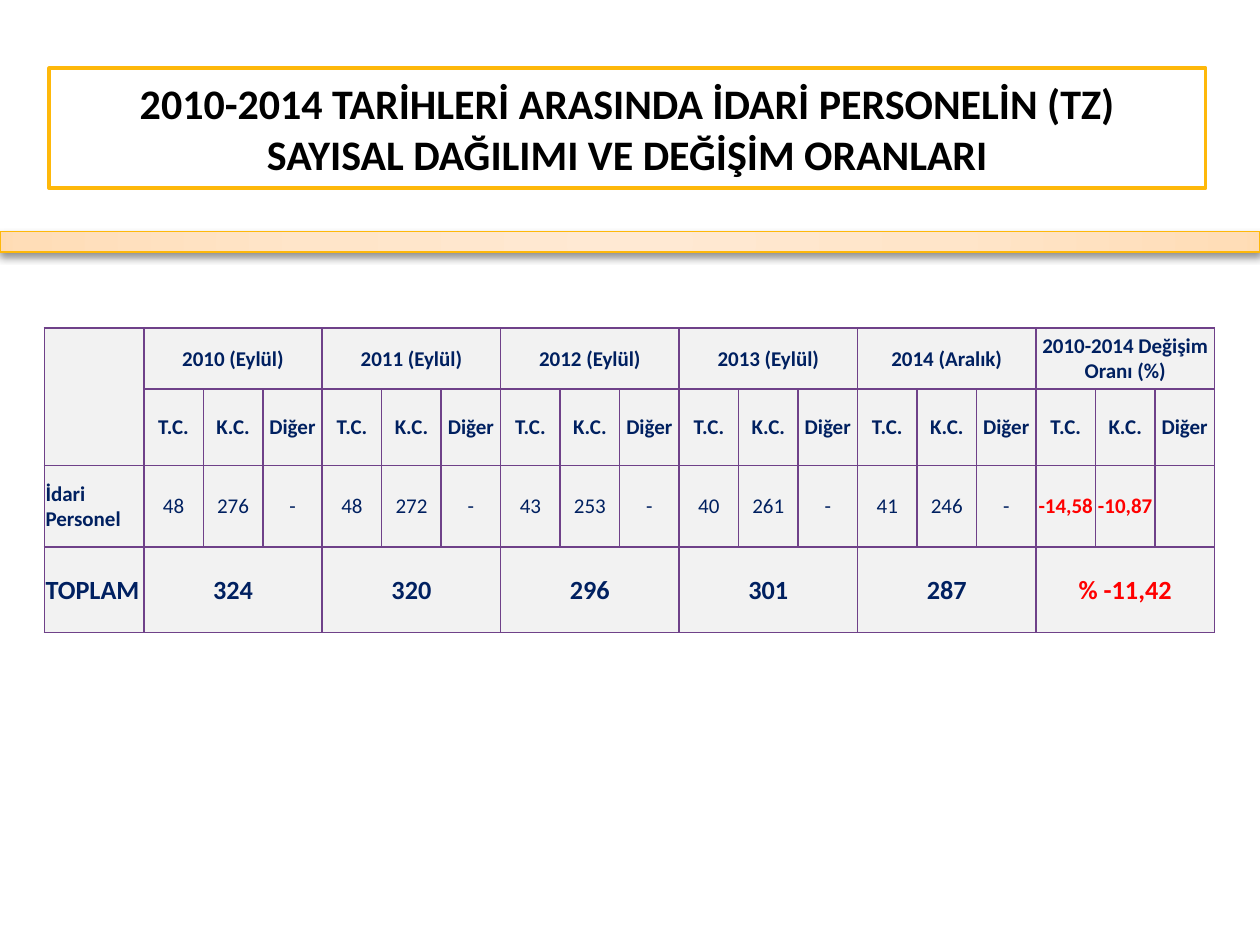
from dataclasses import dataclass

from lxml import etree
from pptx import Presentation
from pptx.dml.color import RGBColor
from pptx.enum.shapes import MSO_SHAPE
from pptx.enum.text import MSO_ANCHOR, MSO_AUTO_SIZE, PP_ALIGN
from pptx.oxml.ns import qn
from pptx.slide import Slide
from pptx.table import Table, _Cell
from pptx.text.text import TextFrame
from pptx.util import Pt

RECTANGLE = MSO_SHAPE.RECTANGLE
MIDDLE = MSO_ANCHOR.MIDDLE
NO_AUTOFIT = MSO_AUTO_SIZE.NONE
LEFT, CENTER = PP_ALIGN.LEFT, PP_ALIGN.CENTER


@dataclass(frozen=True)
class Theme:
    font: str = "Calibri"
    paper: str = "FFFFFF"
    ink: str = "000000"
    gold: str = "FEB80A"
    navy: str = "002060"
    red: str = "FF0000"
    cell: str = "F2F2F2"
    border: str = "6F4189"
    band: tuple = ((0, "FFE9D3"), (50, "FFE5C9"), (97, "FFDDB7"), (100, "FFDBB2"))
    title_size: float = 24
    body_size: float = 12
    total_size: float = 15


@dataclass(frozen=True)
class Period:
    heading: str
    counts: tuple[str, str, str]
    total: str
    is_change: bool = False


@dataclass(frozen=True)
class TextStyle:
    size: float
    color: str
    bold: bool = True
    align: PP_ALIGN = CENTER


THEME = Theme()
TITLE = (
    "2010-2014 TARİHLERİ ARASINDA İDARİ PERSONELİN (TZ)\n"
    "SAYISAL DAĞILIMI VE DEĞİŞİM ORANLARI"
)
CITIZENSHIPS = ("T.C.", "K.C.", "Diğer")
PERIODS = (
    Period("2010 (Eylül)", ("48", "276", "-"), "324"),
    Period("2011 (Eylül)", ("48", "272", "-"), "320"),
    Period("2012 (Eylül)", ("43", "253", "-"), "296"),
    Period("2013 (Eylül)", ("40", "261", "-"), "301"),
    Period("2014 (Aralık)", ("41", "246", "-"), "287"),
    Period("2010-2014 Değişim Oranı (%)", ("-14,58", "-10,87", ""), "% -11,42", True),
)
ROW_HEIGHTS = (35, 43.6, 46.6, 49)
LABEL_WIDTH = 56.88
COUNT_WIDTH = 34

HEADING = TextStyle(THEME.body_size, THEME.navy)
ROW_LABEL = TextStyle(THEME.body_size, THEME.navy, align=LEFT)
COUNT = TextStyle(THEME.body_size, THEME.navy, bold=False)
COUNT_CHANGE = TextStyle(THEME.body_size, THEME.red)
TOTAL_LABEL = TextStyle(THEME.total_size, THEME.navy, align=LEFT)
TOTAL = TextStyle(THEME.total_size, THEME.navy)
TOTAL_CHANGE = TextStyle(THEME.total_size, THEME.red)


def rgb(color: str) -> RGBColor:
    return RGBColor.from_string(color)


def add_color(parent: etree._Element, color: str) -> etree._Element:
    return etree.SubElement(parent, qn("a:srgbClr"), val=color)


def write_text(frame: TextFrame, text: str, style: TextStyle) -> None:
    frame.text = text
    for paragraph in frame.paragraphs:
        paragraph.alignment = style.align
        for run in paragraph.runs:
            run.font.name = THEME.font
            run.font.size = Pt(style.size)
            run.font.bold = style.bold
            run.font.color.rgb = rgb(style.color)


def add_title(slide: Slide) -> None:
    title = slide.shapes.title
    title.left, title.top = Pt(28), Pt(39)
    title.width, title.height = Pt(661), Pt(68.5)
    title.fill.solid()
    title.fill.fore_color.rgb = rgb(THEME.paper)
    title.line.color.rgb = rgb(THEME.gold)
    title.line.width = Pt(2)
    title.text_frame.auto_size = NO_AUTOFIT
    title.text_frame.vertical_anchor = MIDDLE
    write_text(title.text_frame, TITLE, TextStyle(THEME.title_size, THEME.ink))


def add_band(slide: Slide) -> None:
    band = slide.shapes.add_shape(RECTANGLE, Pt(0), Pt(132.5), Pt(720), Pt(11.5))
    band.line.color.rgb = rgb(THEME.gold)
    band.line.width = Pt(0.75)
    band.shadow.inherit = False
    band.fill.background()
    properties = band.element.spPr

    gradient = etree.Element(qn("a:gradFill"), rotWithShape="1")
    stops = etree.SubElement(gradient, qn("a:gsLst"))
    for percent, color in THEME.band:
        add_color(etree.SubElement(stops, qn("a:gs"), pos=str(percent * 1000)), color)
    radial = etree.SubElement(gradient, qn("a:path"), path="circle")
    etree.SubElement(radial, qn("a:fillToRect"), l="50000", t="50000", r="50000", b="50000")
    properties.replace(properties.find(qn("a:noFill")), gradient)

    shadow = etree.SubElement(
        properties.find(qn("a:effectLst")), qn("a:outerShdw"),
        blurRad=str(Pt(5)), dist=str(Pt(2)), dir="5400000", rotWithShape="0",
    )
    etree.SubElement(add_color(shadow, THEME.ink), qn("a:alpha"), val="43000")


def format_cell(cell: _Cell) -> None:
    cell.fill.solid()
    cell.fill.fore_color.rgb = rgb(THEME.cell)
    cell.vertical_anchor = MIDDLE
    cell.margin_left = cell.margin_top = cell.margin_right = Pt(0.72)
    cell.margin_bottom = Pt(0)
    properties = cell._tc.get_or_add_tcPr()
    for position, side in enumerate(("a:lnL", "a:lnR", "a:lnT", "a:lnB")):
        edge = etree.Element(qn(side), w=str(Pt(1)))
        add_color(etree.SubElement(edge, qn("a:solidFill")), THEME.border)
        properties.insert(position, edge)


def write_period(table: Table, first: int, period: Period) -> None:
    last = first + len(CITIZENSHIPS) - 1
    count_style = COUNT_CHANGE if period.is_change else COUNT
    total_style = TOTAL_CHANGE if period.is_change else TOTAL
    for row, text, style in ((0, period.heading, HEADING), (3, period.total, total_style)):
        table.cell(row, first).merge(table.cell(row, last))
        write_text(table.cell(row, first).text_frame, text, style)
    for offset, (citizenship, count) in enumerate(zip(CITIZENSHIPS, period.counts)):
        write_text(table.cell(1, first + offset).text_frame, citizenship, HEADING)
        if count:
            write_text(table.cell(2, first + offset).text_frame, count, count_style)


def add_staff_table(slide: Slide) -> None:
    count_columns = len(PERIODS) * len(CITIZENSHIPS)
    table = slide.shapes.add_table(
        len(ROW_HEIGHTS), count_columns + 1, Pt(25.3), Pt(187.3),
        Pt(LABEL_WIDTH + count_columns * COUNT_WIDTH), Pt(sum(ROW_HEIGHTS)),
    ).table
    table.first_row = table.horz_banding = False
    for index, column in enumerate(table.columns):
        column.width = Pt(COUNT_WIDTH if index else LABEL_WIDTH)
    for row, height in zip(table.rows, ROW_HEIGHTS):
        row.height = Pt(height)
    for cell in table.iter_cells():
        format_cell(cell)
    table.cell(0, 0).merge(table.cell(1, 0))
    write_text(table.cell(2, 0).text_frame, "İdari Personel", ROW_LABEL)
    write_text(table.cell(3, 0).text_frame, "TOPLAM", TOTAL_LABEL)
    for index, period in enumerate(PERIODS):
        write_period(table, 1 + index * len(CITIZENSHIPS), period)


def main() -> None:
    presentation = Presentation()
    presentation.slide_width, presentation.slide_height = Pt(720), Pt(540)
    slide = presentation.slides.add_slide(presentation.slide_layouts[5])
    add_staff_table(slide)
    add_title(slide)
    add_band(slide)
    presentation.save("out.pptx")


if __name__ == "__main__":
    main()
